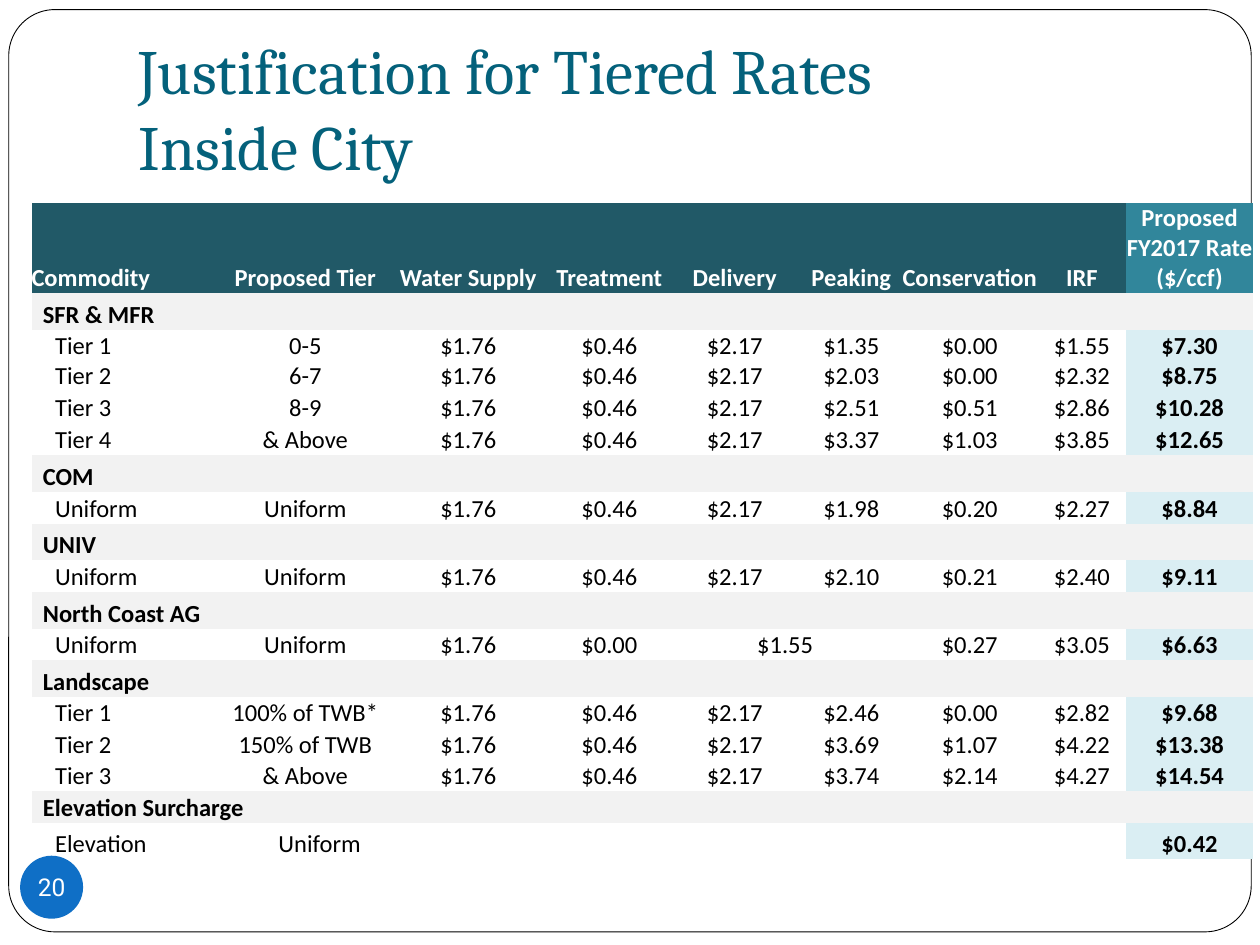
"""Build the slide that justifies tiered water rates inside the city."""
import dataclasses

import lxml.etree
import pptx
import pptx.dml.color
import pptx.enum.shapes
import pptx.enum.text
import pptx.oxml.ns
import pptx.util

Pt = pptx.util.Pt
Align = pptx.enum.text.PP_ALIGN
Anchor = pptx.enum.text.MSO_ANCHOR
Shapes = pptx.enum.shapes.MSO_SHAPE

HEADER = ("Commodity|Proposed Tier|<|Water Supply|Treatment|Delivery|Peaking|"
          "Conservation|IRF|Proposed FY2017 Rate ($/ccf)")
SECTION = "{}||<|||||||"
SUPPLY = "$1.76|$0.46|$2.17"
ROWS = [
    ("header", 51.4, HEADER),
    ("section", 21, SECTION.format("SFR & MFR")),
    ("detail", 18, f"Tier 1|0-5|<|{SUPPLY}|$1.35|$0.00|$1.55|$7.30"),
    ("detail", 17.2, f"Tier 2|6-7|<|{SUPPLY}|$2.03|$0.00|$2.32|$8.75"),
    ("detail", 18, f"Tier 3|8-9|<|{SUPPLY}|$2.51|$0.51|$2.86|$10.28"),
    ("detail", 18.7, f"Tier 4|& Above|<|{SUPPLY}|$3.37|$1.03|$3.85|$12.65"),
    ("section", 21, SECTION.format("COM")),
    ("detail", 18, f"Uniform|Uniform|<|{SUPPLY}|$1.98|$0.20|$2.27|$8.84"),
    ("section", 21, SECTION.format("UNIV")),
    ("detail", 18, f"Uniform|Uniform|<|{SUPPLY}|$2.10|$0.21|$2.40|$9.11"),
    ("section", 21, SECTION.format("North Coast AG")),
    ("detail", 18, "Uniform|Uniform|<|$1.76|$0.00|$1.55|<|$0.27|$3.05|$6.63"),
    ("section", 21, SECTION.format("Landscape")),
    ("detail", 18, f"Tier 1|100% of TWB*|<|{SUPPLY}|$2.46|$0.00|$2.82|$9.68"),
    ("detail", 18, f"Tier 2|150% of TWB|<|{SUPPLY}|$3.69|$1.07|$4.22|$13.38"),
    ("detail", 18, f"Tier 3|& Above|<|{SUPPLY}|$3.74|$2.14|$4.27|$14.54"),
    ("section", 18, "Elevation Surcharge|<|<|||||||"),
    ("detail", 21, "Elevation|<|Uniform|||||||$0.42"),
]
COLUMN_WIDTHS = [110.2, 15.8, 76.3, 93.6, 67.7, 75.6, 57.6, 77.8, 50.4, 72.7]


@dataclasses.dataclass(frozen=True)
class RowStyle:
    """Look of one kind of table row."""
    fill: str
    rate_fill: str
    color: str
    indent: float
    bold: bool


@dataclasses.dataclass(frozen=True)
class Theme:
    """Colours, fonts and type sizes of the slide."""
    white: str = "FFFFFF"
    black: str = "000000"
    title: str = "04617B"
    badge: str = "0F6FC6"
    title_font: str = "Cambria"
    table_font: str = "Calibri"
    badge_font: str = "Roboto"
    title_size: float = 36
    body_size: float = 14
    rows: dict = dataclasses.field(default_factory=lambda: {
        "header": RowStyle("215967", "31869B", "FFFFFF", 0, True),
        "section": RowStyle("F2F2F2", "F2F2F2", "000000", 6.5, True),
        "detail": RowStyle("FFFFFF", "DAEEF3", "000000", 13.5, False),
    })


class SlideBuilder:
    """Holds the theme and the current slide."""

    def __init__(self, slide, theme):
        self.slide = slide
        self.theme = theme

    def paint(self, fill, color):
        """Apply a solid colour to a fill."""
        fill.solid()
        fill.fore_color.rgb = pptx.dml.color.RGBColor.from_string(color)

    def set_margins(self, target, left=0, top=0, right=0, bottom=0):
        """Set the inner margins of a text frame or a cell."""
        target.margin_left, target.margin_top = Pt(left), Pt(top)
        target.margin_right, target.margin_bottom = Pt(right), Pt(bottom)

    def add_run(self, paragraph, text, font, size, color, bold=False):
        """Append one styled run."""
        run = paragraph.add_run()
        run.text = text
        run.font.name, run.font.size, run.font.bold = font, Pt(size), bold
        self.paint(run.font.fill, color)

    def add_shape(self, kind, box, fill):
        """Add a filled preset shape without shadow or line."""
        shape = self.slide.shapes.add_shape(kind, *map(Pt, box))
        shape.shadow.inherit = False
        self.paint(shape.fill, fill)
        shape.line.fill.background()
        return shape

    def add_frame(self, box, corner):
        """Add the rounded border behind everything else."""
        frame = self.add_shape(Shapes.ROUNDED_RECTANGLE, box, self.theme.white)
        frame.adjustments[0] = corner
        self.paint(frame.line.fill, self.theme.black)
        frame.line.width = Pt(0.5)
        frame.element.getparent().insert(2, frame.element)

    def add_title(self, box, lines):
        """Place and fill the title placeholder."""
        title = self.slide.shapes.title
        title.left, title.top, title.width, title.height = map(Pt, box)
        text_frame = title.text_frame
        text_frame.word_wrap = True
        text_frame.auto_size = pptx.enum.text.MSO_AUTO_SIZE.NONE
        text_frame.vertical_anchor = Anchor.BOTTOM
        self.set_margins(text_frame, 7.2, 3.6, 7.2, 7.2)
        paragraph = text_frame.paragraphs[0]
        paragraph.alignment = Align.LEFT
        for index, line in enumerate(lines):
            if index:
                paragraph.add_line_break()
            self.add_run(paragraph, line, self.theme.title_font,
                         self.theme.title_size, self.theme.title)

    def fill_cell(self, cell, text, style, is_first, is_rate):
        """Style one cell and write its text."""
        self.paint(cell.fill, style.rate_fill if is_rate else style.fill)
        self.set_margins(cell, left=style.indent if is_first else 0)
        cell.vertical_anchor = Anchor.BOTTOM
        paragraph = cell.text_frame.paragraphs[0]
        paragraph.alignment = Align.LEFT if is_first else Align.CENTER
        if text:
            self.add_run(paragraph, text, self.theme.table_font, self.theme.body_size,
                         style.color, style.bold or is_rate)
        else:
            lxml.etree.SubElement(paragraph._p, pptx.oxml.ns.qn("a:endParaRPr"),
                                  sz=str(self.theme.body_size * 100))

    def add_table(self, left, top, widths, rows):
        """Add the rate table; a cell marked < joins the one on its left."""
        height = sum(row[1] for row in rows)
        shape = self.slide.shapes.add_table(
            len(rows), len(widths), Pt(left), Pt(top), Pt(sum(widths)), Pt(height))
        table = shape.table
        table.first_row = table.horz_banding = False
        style_id = table._tbl.tblPr.find(pptx.oxml.ns.qn("a:tableStyleId"))
        style_id.text = "{2D5ABB26-0587-4C30-8999-92F81FD0307C}"
        for column, width in zip(table.columns, widths):
            column.width = Pt(width)
        for row_index, (kind, row_height, line) in enumerate(rows):
            table.rows[row_index].height = Pt(row_height)
            texts = line.split("|")
            for index, text in enumerate(texts):
                self.fill_cell(table.cell(row_index, index), text.strip("<"),
                               self.theme.rows[kind], index == 0,
                               index == len(widths) - 1)
            starts = [i for i, text in enumerate(texts) if text != "<"]
            for start, following in zip(starts, starts[1:] + [len(texts)]):
                if following - start > 1:
                    table.cell(row_index, start).merge(
                        table.cell(row_index, following - 1))

    def add_badge(self, box, text):
        """Add the round page number."""
        badge = self.add_shape(Shapes.OVAL, box, self.theme.badge)
        text_frame = badge.text_frame
        text_frame.word_wrap = False
        text_frame.vertical_anchor = Anchor.MIDDLE
        self.set_margins(text_frame)
        paragraph = text_frame.paragraphs[0]
        paragraph.alignment = Align.CENTER
        self.add_run(paragraph, text, self.theme.badge_font,
                     self.theme.body_size, self.theme.white)


def main():
    """Create and save the presentation."""
    presentation = pptx.Presentation()
    presentation.slide_width, presentation.slide_height = Pt(720), Pt(540)
    slide = presentation.slides.add_slide(presentation.slide_layouts[5])
    builder = SlideBuilder(slide, Theme())
    builder.add_frame((5, 5.5, 710, 527), 0.05)
    builder.add_title((72, 21.6, 612, 90),
                      ["Justification for Tiered Rates", "Inside City"])
    builder.add_table(18, 116, COLUMN_WIDTHS, ROWS)
    builder.add_badge((11.5, 489, 36, 36), "20")
    presentation.save("out.pptx")


if __name__ == "__main__":
    main()
